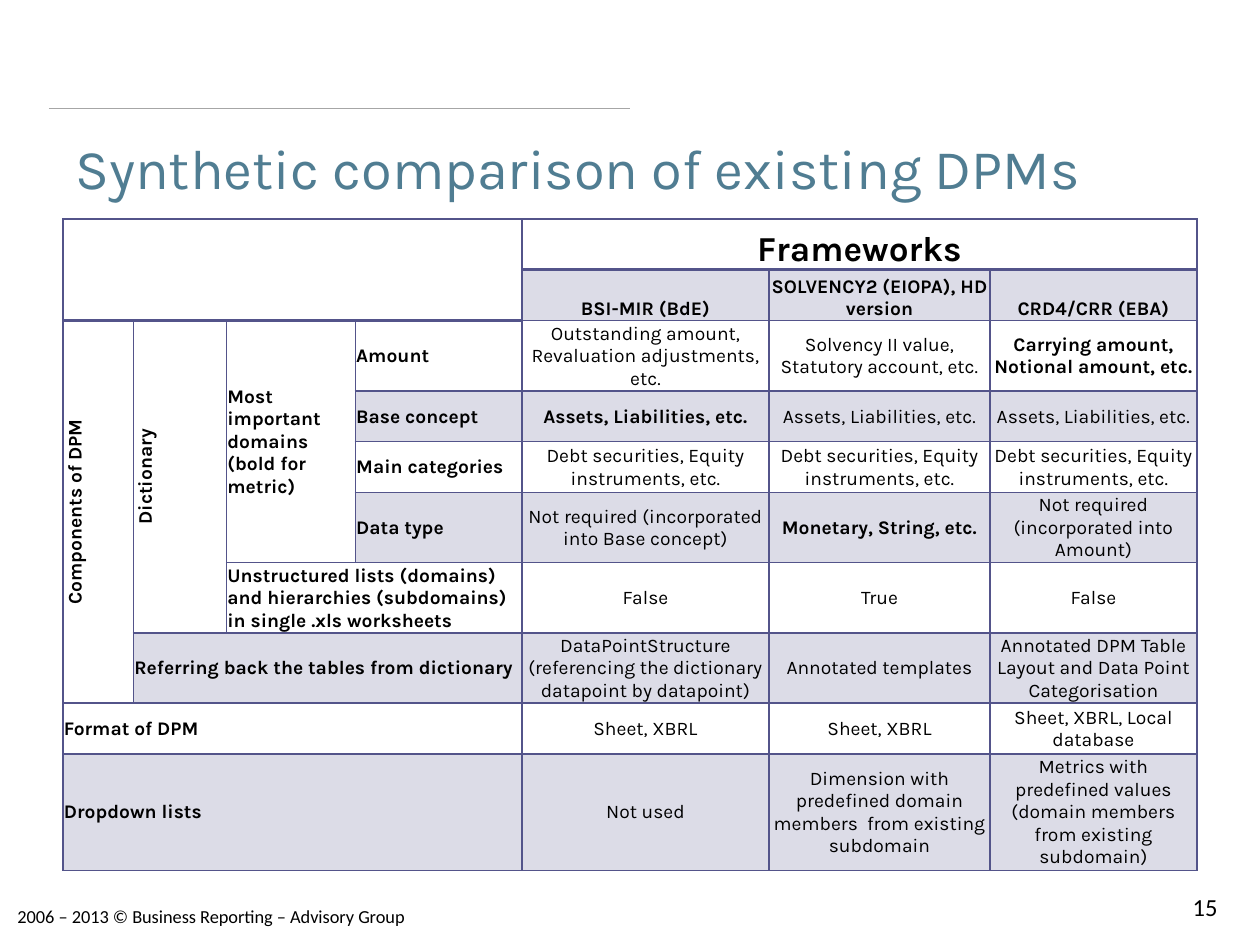
from dataclasses import dataclass

from lxml import etree
from pptx import Presentation
from pptx.dml.color import RGBColor
from pptx.enum.shapes import MSO_CONNECTOR
from pptx.enum.text import MSO_ANCHOR, PP_ALIGN
from pptx.oxml.ns import qn
from pptx.util import Pt

LEFT, CENTER, RIGHT = PP_ALIGN.LEFT, PP_ALIGN.CENTER, PP_ALIGN.RIGHT
TOP, MIDDLE, BOTTOM = MSO_ANCHOR.TOP, MSO_ANCHOR.MIDDLE, MSO_ANCHOR.BOTTOM
STRAIGHT = MSO_CONNECTOR.STRAIGHT

COLORS = {"text": "000000", "title": "507D92", "rule": "A6A6A6", "grid": "53548A"}
COL_WIDTHS = [40.3, 53.2, 73.6, 95.3, 141.1, 126.4, 118.1]
ROW_COUNT, ROW_HEIGHT, TABLE_HEIGHT = 10, 29, 360.7
HEADER_ROWS, LABEL_COLS = 2, 4
SHADE_ALPHA = "20000"


@dataclass
class Entry:
    row: int
    col: int
    text: str
    rows: int = 1
    cols: int = 1
    size: float = 11
    metric: bool = False
    vertical: bool = False


@dataclass
class TextBox:
    left: float
    top: float
    width: float
    height: float
    text: str
    size: float
    font: str = "Calibri"
    color: str = "text"
    align: PP_ALIGN = LEFT
    anchor: MSO_ANCHOR = TOP
    wrap: bool = True


BOXES = [
    TextBox(2.9, 513.8, 238.3, 20, "2006 – 2013 © Business Reporting – Advisory Group", 10.5, wrap=False),
    TextBox(36, 61.7, 648, 67.7, "Synthetic comparison of existing DPMs", 32,
            font="Karla", color="title", anchor=MIDDLE),
    TextBox(643, 506.2, 59.8, 22.3, "15", 14, align=RIGHT),
]

LABELS = [
    Entry(0, 0, "", rows=2, cols=4),
    Entry(0, 4, "Frameworks", cols=3, size=20),
    Entry(2, 0, "Components of DPM", rows=6, vertical=True),
    Entry(2, 1, "Dictionary", rows=5, vertical=True),
    Entry(2, 2, "Most important domains (bold for metric)", rows=4),
    Entry(2, 3, "Amount"),
    Entry(3, 3, "Base concept"),
    Entry(4, 3, "Main categories"),
    Entry(5, 3, "Data type"),
    Entry(6, 2, "Unstructured lists (domains) and hierarchies (subdomains) in single .xls worksheets", cols=2),
    Entry(7, 1, "Referring back the tables from dictionary", cols=3),
    Entry(8, 0, "Format of DPM", cols=4),
    Entry(9, 0, "Dropdown lists", cols=4),
]

FRAMEWORK_ROWS = [
    ["BSI-MIR (BdE)", "SOLVENCY2 (EIOPA), HD version", "CRD4/CRR (EBA)"],
    ["Outstanding amount, Revaluation adjustments, etc.",
     "Solvency II value, Statutory account, etc.",
     "Carrying amount, Notional amount, etc."],
    ["Assets, Liabilities, etc."] * 3,
    ["Debt securities, Equity instruments, etc."] * 3,
    ["Not required (incorporated into Base concept)",
     "Monetary, String, etc.",
     "Not required (incorporated into Amount)"],
    ["False", "True", "False"],
    ["DataPointStructure (referencing the dictionary datapoint by datapoint)",
     "Annotated templates",
     "Annotated DPM Table Layout and Data Point Categorisation"],
    ["Sheet, XBRL", "Sheet, XBRL", "Sheet, XBRL, Local database"],
    ["Not used",
     "Dimension with predefined domain members  from existing subdomain",
     "Metrics with predefined values (domain members from existing subdomain)"],
]
METRIC_CELLS = {(2, 6), (3, 4), (5, 5)}


def rgb(name: str) -> RGBColor:
    return RGBColor.from_string(COLORS[name])


def write(tf, text: str, *, size: float, font: str = "Karla", color: str = "text",
          bold: bool = False, align: PP_ALIGN = LEFT) -> None:
    p = tf.paragraphs[0]
    p.alignment = align
    r = p.add_run()
    r.text = text
    r.font.size = Pt(size)
    r.font.name = font
    r.font.bold = bold
    r.font.color.rgb = rgb(color)


def add_text_box(s, box: TextBox) -> None:
    sp = s.shapes.add_textbox(Pt(box.left), Pt(box.top), Pt(box.width), Pt(box.height))
    tf = sp.text_frame
    tf.word_wrap = box.wrap
    tf.vertical_anchor = box.anchor
    write(tf, box.text, size=box.size, font=box.font, color=box.color, align=box.align)


def add_rule(s, x1: float, x2: float, y: float) -> None:
    line = s.shapes.add_connector(STRAIGHT, Pt(x1), Pt(y), Pt(x2), Pt(y))
    line.line.color.rgb = rgb("rule")
    line.line.width = Pt(0.25)
    etree.SubElement(line._element.spPr, qn("a:effectLst"))


def style_cell(cell, row: int, col: int) -> None:
    cell.margin_left = cell.margin_right = cell.margin_top = Pt(0.5)
    cell.margin_bottom = Pt(0)
    cell.vertical_anchor = BOTTOM if row < HEADER_ROWS else MIDDLE
    tc_pr = cell._tc.get_or_add_tcPr()
    cell.fill.background()
    thick = row == 0 or (row < HEADER_ROWS and col < LABEL_COLS)
    for i, side in enumerate(("L", "R", "T", "B")):
        width = 2 if side == "B" and thick else 1
        ln = etree.Element(qn(f"a:ln{side}"), w=str(Pt(width)))
        fill = etree.SubElement(ln, qn("a:solidFill"))
        etree.SubElement(fill, qn("a:srgbClr"), val=COLORS["grid"])
        tc_pr.insert(i, ln)


def shade(cell) -> None:
    cell.fill.solid()
    cell.fill.fore_color.rgb = rgb("grid")
    color = cell._tc.tcPr.find(qn("a:solidFill")).find(qn("a:srgbClr"))
    etree.SubElement(color, qn("a:alpha"), val=SHADE_ALPHA)


def fill_entry(table, entry: Entry) -> None:
    cell = table.cell(entry.row, entry.col)
    if entry.rows > 1 or entry.cols > 1:
        cell.merge(table.cell(entry.row + entry.rows - 1, entry.col + entry.cols - 1))
    if entry.row % 2:
        shade(cell)
    if entry.vertical:
        cell._tc.tcPr.set("vert", "vert270")
    if entry.text:
        is_label = entry.row < HEADER_ROWS or entry.col < LABEL_COLS
        centered = entry.col >= LABEL_COLS or entry.vertical
        write(cell.text_frame, entry.text, size=entry.size,
              bold=is_label or entry.metric, align=CENTER if centered else LEFT)


def add_comparison(s, left: float, top: float) -> None:
    frame = s.shapes.add_table(ROW_COUNT, len(COL_WIDTHS), Pt(left), Pt(top),
                               Pt(sum(COL_WIDTHS)), Pt(TABLE_HEIGHT))
    table = frame.table
    table.first_row = table.horz_banding = False
    for column, width in zip(table.columns, COL_WIDTHS):
        column.width = Pt(width)
    for r, row in enumerate(table.rows):
        row.height = Pt(ROW_HEIGHT)
        for c, cell in enumerate(row.cells):
            style_cell(cell, r, c)
    frame.height = Pt(TABLE_HEIGHT)
    values = [Entry(r, c, text, metric=(r, c) in METRIC_CELLS)
              for r, texts in enumerate(FRAMEWORK_ROWS, 1)
              for c, text in enumerate(texts, LABEL_COLS)]
    for entry in LABELS + values:
        fill_entry(table, entry)


def main() -> None:
    prs = Presentation()
    prs.slide_width, prs.slide_height = Pt(720), Pt(540)
    s = prs.slides.add_slide(prs.slide_layouts[6])
    add_rule(s, 28, 360, 62)
    for box in BOXES:
        add_text_box(s, box)
    add_comparison(s, 36, 125.2)
    prs.save("out.pptx")


if __name__ == "__main__":
    main()
